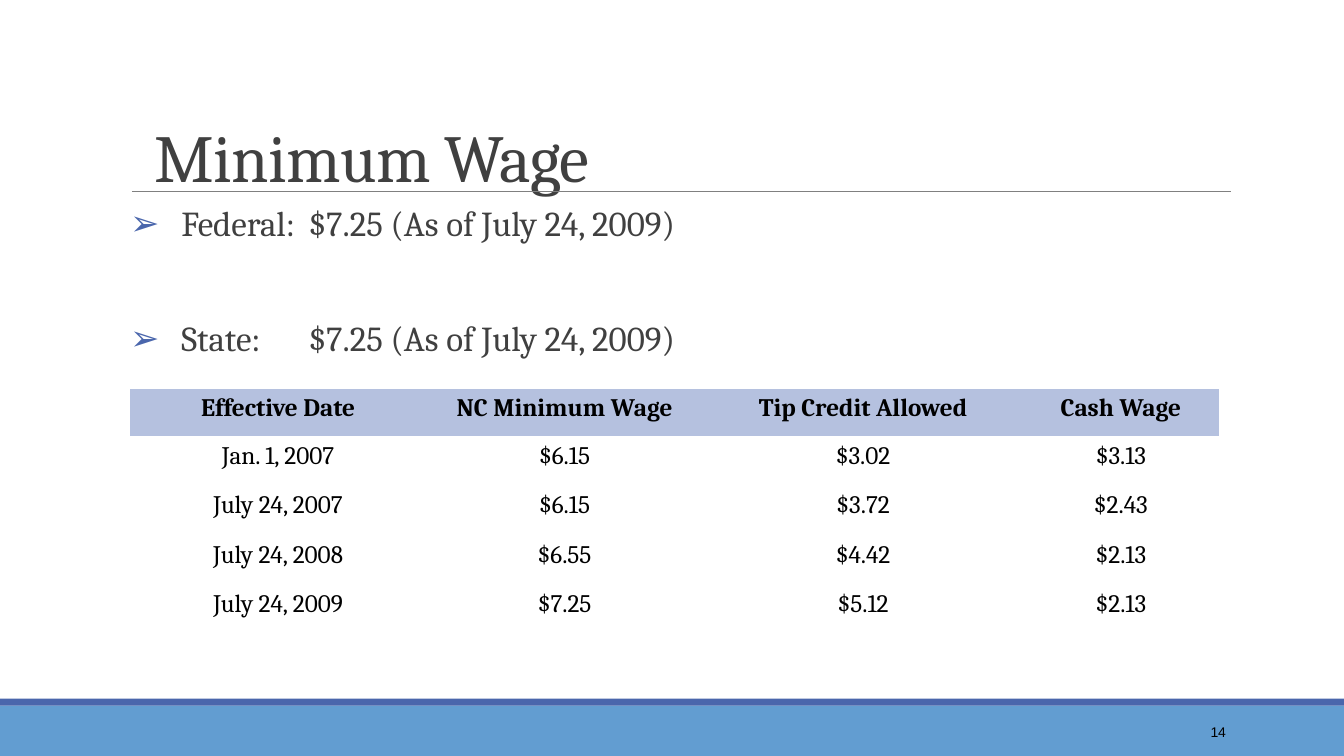
from dataclasses import dataclass

from lxml.etree import SubElement
from pptx import Presentation
from pptx.dml.color import RGBColor
from pptx.enum.shapes import MSO_CONNECTOR as Connector, MSO_SHAPE as Shape
from pptx.enum.text import MSO_ANCHOR as Anchor, MSO_AUTO_SIZE as AutoSize, PP_ALIGN as Align
from pptx.oxml.ns import qn
from pptx.util import Pt

SERIF = "Cambria"
INK, BLACK, ACCENT = "404040", "000000", "4A66AC"
LEFT = 92.9
NO_STYLE_NO_GRID = "{2D5ABB26-0587-4C30-8999-92F81FD0307C}"


@dataclass(frozen=True)
class Band:
    top: float
    height: float
    color: str


@dataclass(frozen=True)
class Rate:
    level: str
    wage: str
    space_before: float


BANDS = [Band(504, 36, "629DD1"), Band(499, 5, ACCENT)]
RATES = [
    Rate("Federal:", "$7.25 (As of July 24, 2009)", 12),
    Rate("State:", "$7.25 (As of July 24, 2009)", 53),
]
WAGE_COLUMNS = [211.5, 197.8, 228.7, 139.6]
WAGE_ROWS = [
    ("Effective Date", "NC Minimum Wage", "Tip Credit Allowed", "Cash Wage"),
    ("Jan. 1, 2007", "$6.15", "$3.02", "$3.13"),
    ("July 24, 2007", "$6.15", "$3.72", "$2.43"),
    ("July 24, 2008", "$6.55", "$4.42", "$2.13"),
    ("July 24, 2009", "$7.25", "$5.12", "$2.13"),
]


def rgb(color: str) -> RGBColor:
    return RGBColor.from_string(color)


def style(paragraph, size: float, color: str, font: str = SERIF, bold: bool = False) -> None:
    paragraph.font.size = Pt(size)
    paragraph.font.name = font
    paragraph.font.bold = bold
    paragraph.font.color.rgb = rgb(color)


def add_band(slide, band: Band, width: int) -> None:
    bar = slide.shapes.add_shape(Shape.RECTANGLE, 0, Pt(band.top), width, Pt(band.height))
    bar.shadow.inherit = False
    bar.fill.solid()
    bar.fill.fore_color.rgb = rgb(band.color)
    bar.line.fill.background()


def add_title_rule(slide) -> None:
    rule = slide.shapes.add_connector(Connector.STRAIGHT, Pt(94.3), Pt(136.8), Pt(879), Pt(136.8))
    rule.line.color.rgb = rgb("808080")
    rule.line.width = Pt(0.5)
    SubElement(rule._element.spPr, qn("a:effectLst"))


def fill_title(slide) -> None:
    title = slide.shapes.title
    title.left, title.top, title.width, title.height = Pt(LEFT), Pt(66.2), Pt(345.6), Pt(77.8)
    frame = title.text_frame
    frame.text = "Minimum Wage"
    frame.auto_size = AutoSize.NONE
    frame.vertical_anchor = Anchor.BOTTOM
    heading = frame.paragraphs[0]
    heading.alignment = Align.CENTER
    heading.line_spacing = 0.85
    style(heading, 48, INK)
    heading.runs[0].font._element.set("spc", "-50")


def add_bullet(paragraph, indent: float, tab: float) -> None:
    properties = paragraph._p.get_or_add_pPr()
    properties.set("marL", str(Pt(indent)))
    properties.set("indent", str(-Pt(indent)))
    bullet_color = SubElement(properties, qn("a:buClr"))
    SubElement(bullet_color, qn("a:srgbClr"), val=ACCENT)
    SubElement(properties, qn("a:buFont"), typeface="Arial")
    SubElement(properties, qn("a:buChar"), char="➢")
    tabs = SubElement(properties, qn("a:tabLst"))
    SubElement(tabs, qn("a:tab"), pos=str(Pt(tab)), algn="l")


def add_rates(slide) -> None:
    frame = slide.shapes.add_textbox(Pt(LEFT), Pt(144), Pt(729.4), Pt(339)).text_frame
    frame.word_wrap = True
    frame.margin_left = frame.margin_right = 0
    for index, rate in enumerate(RATES):
        line = frame.add_paragraph() if index else frame.paragraphs[0]
        line.text = f"{rate.level}\t{rate.wage}"
        line.line_spacing = 0.9
        line.space_before, line.space_after = Pt(rate.space_before), Pt(2)
        add_bullet(line, 36.7, 127.5)
        style(line, 25, INK)


def add_wage_table(slide) -> None:
    frame = slide.shapes.add_table(
        len(WAGE_ROWS), len(WAGE_COLUMNS), Pt(LEFT), Pt(277.9), Pt(sum(WAGE_COLUMNS)), Pt(175.7)
    )
    wages = frame.table
    wages.horz_banding = False
    wages._tbl.tblPr.find(qn("a:tableStyleId")).text = NO_STYLE_NO_GRID
    for column, width in zip(wages.columns, WAGE_COLUMNS):
        column.width = Pt(width)
    for row_index, (row, values) in enumerate(zip(wages.rows, WAGE_ROWS)):
        is_header = row_index == 0
        row.height = Pt(33.8 if is_header else 35.4)
        for cell, value in zip(row.cells, values):
            cell.text = value
            entry = cell.text_frame.paragraphs[0]
            entry.alignment = Align.CENTER
            style(entry, 18, BLACK, bold=is_header)
            if is_header:
                cell.fill.solid()
                cell.fill.fore_color.rgb = rgb("B5C1DF")
            else:
                cell.fill.background()


def add_page_number(slide) -> None:
    frame = slide.shapes.add_textbox(Pt(779.8), Pt(508.3), Pt(103), Pt(28.8)).text_frame
    frame.word_wrap = True
    frame.vertical_anchor = Anchor.MIDDLE
    number = frame.paragraphs[0]
    number.text = "14"
    number.alignment = Align.RIGHT
    style(number, 10, BLACK, font="Arial")


def main() -> None:
    deck = Presentation()
    deck.slide_width, deck.slide_height = Pt(960), Pt(540)
    slide = deck.slides.add_slide(deck.slide_layouts[5])
    for band in BANDS:
        add_band(slide, band, deck.slide_width)
    add_title_rule(slide)
    add_page_number(slide)
    add_rates(slide)
    fill_title(slide)
    add_wage_table(slide)
    deck.save("out.pptx")


if __name__ == "__main__":
    main()
